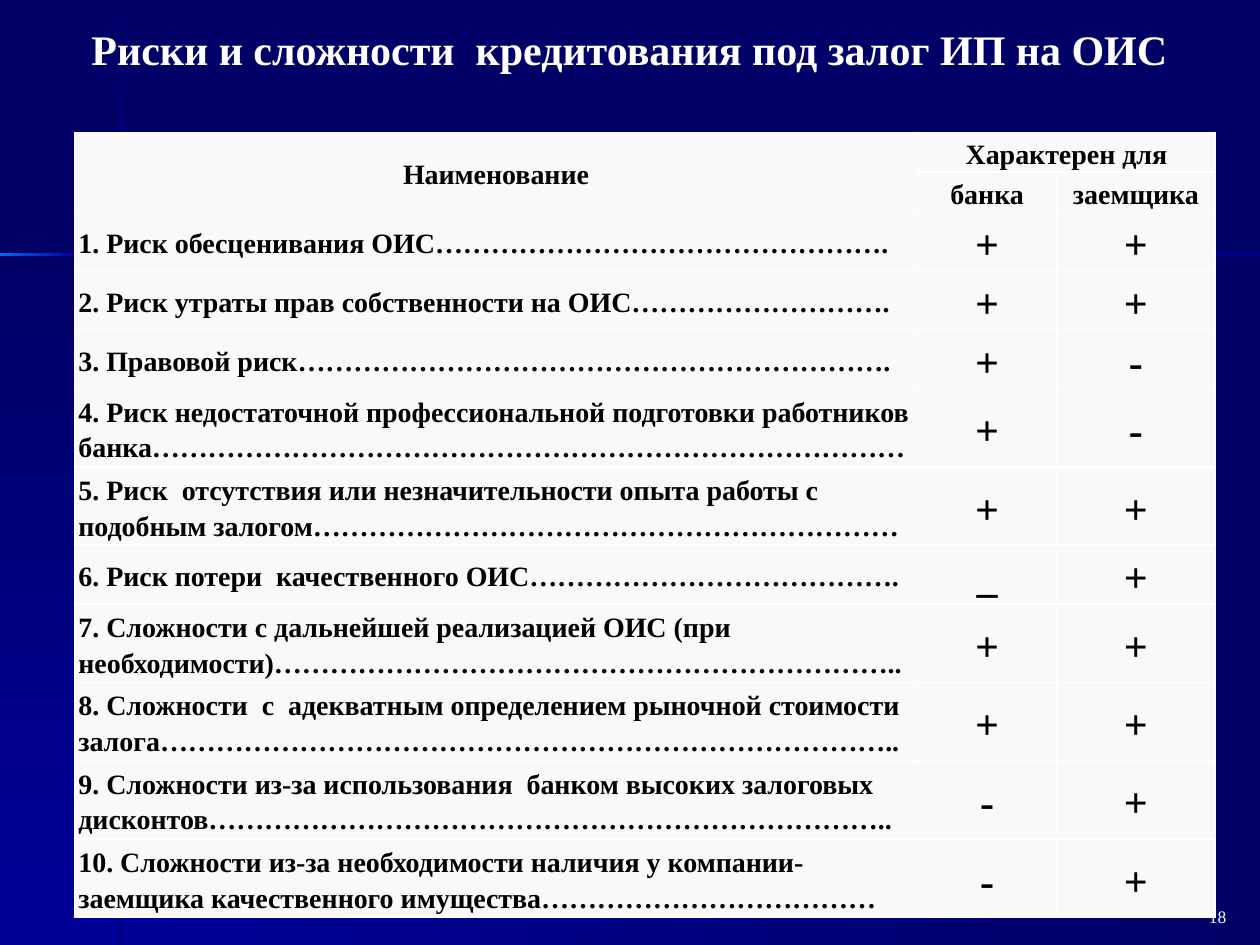
import copy

import pptx
import pptx.dml.color
import pptx.enum.shapes
import pptx.enum.text
import pptx.oxml
import pptx.oxml.ns
import pptx.util

Cm = pptx.util.Cm
Pt = pptx.util.Pt
ALIGN = pptx.enum.text.PP_ALIGN
MIDDLE = pptx.enum.text.MSO_ANCHOR.MIDDLE

COLORS = {
    "dark": "000066",
    "deep": "000099",
    "bright": "0066FF",
    "pale": "FFFFCC",
    "white": "FFFFFF",
    "black": "000000",
    "cell": "F9F9F9",
}
WIDTH, HEIGHT = 25.4, 19.05
RIGHTWARD, DOWNWARD = 0, 270
AXIS_X, AXIS_Y, AXIS_WEIGHT = 2.44, 5.11, 0.05
VERTICAL_STOPS = [0.03, 3.07, 4.19, 6.05, 7.16, HEIGHT]
VERTICAL_COLORS = [
    ("dark", "deep"), ("deep", "bright"), ("bright", "pale", "bright"),
    ("bright", "deep"), ("deep", "dark"),
]
HORIZONTAL_STOPS = [0, 1.54, 3.38, 4.5, WIDTH]
HORIZONTAL_COLORS = [
    ("bright", "deep"), ("pale", "bright", "pale"), ("deep", "bright"), ("dark", "deep"),
]
COLUMN_WIDTHS = [17, 2.8, 3.2]
SHORT_ROW, TALL_ROW = 1.12, 1.47
ROW_HEIGHTS = [0.76, 0.76] + [SHORT_ROW] * 3 + [TALL_ROW] * 2 + [SHORT_ROW] + [TALL_ROW] * 3 + [1.42]
RISKS = [
    ("1. Риск обесценивания ОИС………………………………………….", "+", "+"),
    ("2. Риск утраты прав собственности на ОИС……………………….", "+", "+"),
    ("3. Правовой риск……………………………………………………….", "+", "-"),
    ("4. Риск недостаточной профессиональной подготовки работников "
     "банка………………………………………………………………………", "+", "-"),
    ("5. Риск  отсутствия или незначительности опыта работы с "
     "подобным залогом………………………………………………………", "+", "+"),
    ("6. Риск потери  качественного ОИС………………………………….", "_", "+"),
    ("7. Сложности с дальнейшей реализацией ОИС (при "
     "необходимости)…………………………………………………………..", "+", "+"),
    ("8. Сложности  с  адекватным определением рыночной стоимости "
     "залога……………………………………………………………………..", "+", "+"),
    ("9. Сложности из-за использования  банком высоких залоговых "
     "дисконтов………………………………………………………………..", "-", "+"),
    ("10. Сложности из-за необходимости наличия у компании-"
     "заемщика качественного имущества………………………………", "-", "+"),
]


def rgb(name):
    return pptx.dml.color.RGBColor.from_string(COLORS[name])


def set_attributes(target, values):
    for name, value in values.items():
        setattr(target, name, value)


def write(frame, text, size, color, align, bold=False, spacing=None):
    para = frame.paragraphs[0]
    set_attributes(para, {"alignment": align, "line_spacing": spacing})
    span = para.add_run()
    span.text = text
    set_attributes(span.font, {"name": "Times New Roman", "size": Pt(size), "bold": bold})
    span.font.color.rgb = rgb(color)


def add_gradient_box(page, box, colors, angle):
    shape = page.shapes.add_shape(
        pptx.enum.shapes.MSO_SHAPE.RECTANGLE, *[Cm(length) for length in box])
    shape.shadow.inherit = False
    shape.line.fill.background()
    shape.fill.gradient()
    shape.fill.gradient_angle = angle
    stop_list = shape.element.xpath(".//a:gsLst")[0]
    for _ in colors[2:]:
        stop_list.append(copy.deepcopy(stop_list[-1]))
    for index, (stop, color) in enumerate(zip(shape.fill.gradient_stops, colors)):
        stop.position = index / (len(colors) - 1)
        stop.color.rgb = rgb(color)
    return shape


def add_backdrop(page):
    """Two shaded panels and the glowing axes; returns the frontmost shape."""
    panel_height = HEIGHT - AXIS_Y
    right_panel = (AXIS_X, AXIS_Y, WIDTH - AXIS_X, panel_height)
    add_gradient_box(page, right_panel, ("deep", "dark"), RIGHTWARD)
    add_gradient_box(page, (0, AXIS_Y, AXIS_X, panel_height), ("dark", "deep"), DOWNWARD)
    for top, bottom, colors in zip(VERTICAL_STOPS, VERTICAL_STOPS[1:], VERTICAL_COLORS):
        add_gradient_box(page, (AXIS_X, top, AXIS_WEIGHT, bottom - top), colors, DOWNWARD)
    for left, right, colors in zip(HORIZONTAL_STOPS, HORIZONTAL_STOPS[1:], HORIZONTAL_COLORS):
        front = add_gradient_box(page, (left, AXIS_Y, right - left, AXIS_WEIGHT), colors, RIGHTWARD)
    return front


def place_title(page, behind, left, top, width, height):
    title = page.shapes.title
    behind.element.addnext(title.element)
    set_attributes(title, {"left": Cm(left), "top": Cm(top),
                           "width": Cm(width), "height": Cm(height)})
    set_attributes(title.text_frame, {"word_wrap": True, "vertical_anchor": MIDDLE})
    write(title.text_frame, "Риски и сложности  кредитования под залог ИП на ОИС",
          24, "white", ALIGN.CENTER, bold=True)


def add_page_number(page, left, top, width, height):
    number = page.shapes.add_textbox(Cm(left), Cm(top), Cm(width), Cm(height))
    number.text_frame.word_wrap = True
    write(number.text_frame, "18", 10, "white", ALIGN.RIGHT)


def add_borders(cell):
    properties = cell._tc.get_or_add_tcPr()
    for index, side in enumerate(("lnL", "lnR", "lnT", "lnB")):
        border = pptx.oxml.parse_xml(
            f'<a:{side} {pptx.oxml.ns.nsdecls("a")} w="{Pt(1)}"><a:solidFill>'
            f'<a:srgbClr val="{COLORS["white"]}"/></a:solidFill></a:{side}>')
        properties.insert(index, border)


def fill_cell(cell, text, size, align):
    set_attributes(cell, {
        "vertical_anchor": MIDDLE, "margin_left": Cm(0.08), "margin_right": Cm(0.08),
        "margin_top": Cm(0.02), "margin_bottom": 0})
    cell.fill.solid()
    cell.fill.fore_color.rgb = rgb("cell")
    add_borders(cell)
    if text:
        write(cell.text_frame, text, size, "black", align, bold=True, spacing=1.15)


def add_risk_table(page, left, top):
    rows = [("Наименование", "Характерен для", ""), ("", "банка", "заемщика")] + RISKS
    frame = page.shapes.add_table(len(rows), len(COLUMN_WIDTHS), Cm(left), Cm(top),
                                  Cm(sum(COLUMN_WIDTHS)), Cm(sum(ROW_HEIGHTS)))
    table = frame.table
    set_attributes(table, {"first_row": False, "horz_banding": False})
    for column, width in zip(table.columns, COLUMN_WIDTHS):
        column.width = Cm(width)
    for row, height in zip(table.rows, ROW_HEIGHTS):
        row.height = Cm(height)
    table.cell(0, 0).merge(table.cell(1, 0))
    table.cell(0, 1).merge(table.cell(0, 2))
    for row_index, row in enumerate(rows):
        for column_index, text in enumerate(row):
            is_risk = row_index >= 2
            size = 24 if is_risk and column_index else 16
            align = ALIGN.LEFT if is_risk and not column_index else ALIGN.CENTER
            fill_cell(table.cell(row_index, column_index), text, size, align)


def main():
    deck = pptx.Presentation()
    set_attributes(deck, {"slide_width": Cm(WIDTH), "slide_height": Cm(HEIGHT)})
    page = deck.slides.add_slide(deck.slide_layouts[5])
    page.background.fill.solid()
    page.background.fill.fore_color.rgb = rgb("dark")
    front = add_backdrop(page)
    place_title(page, front, 0.69, 0.33, 24, 1.3)
    add_page_number(page, 19.71, 18.14, 5.26, 0.64)
    add_risk_table(page, 1.5, 2.67)
    deck.save("out.pptx")


if __name__ == "__main__":
    main()
